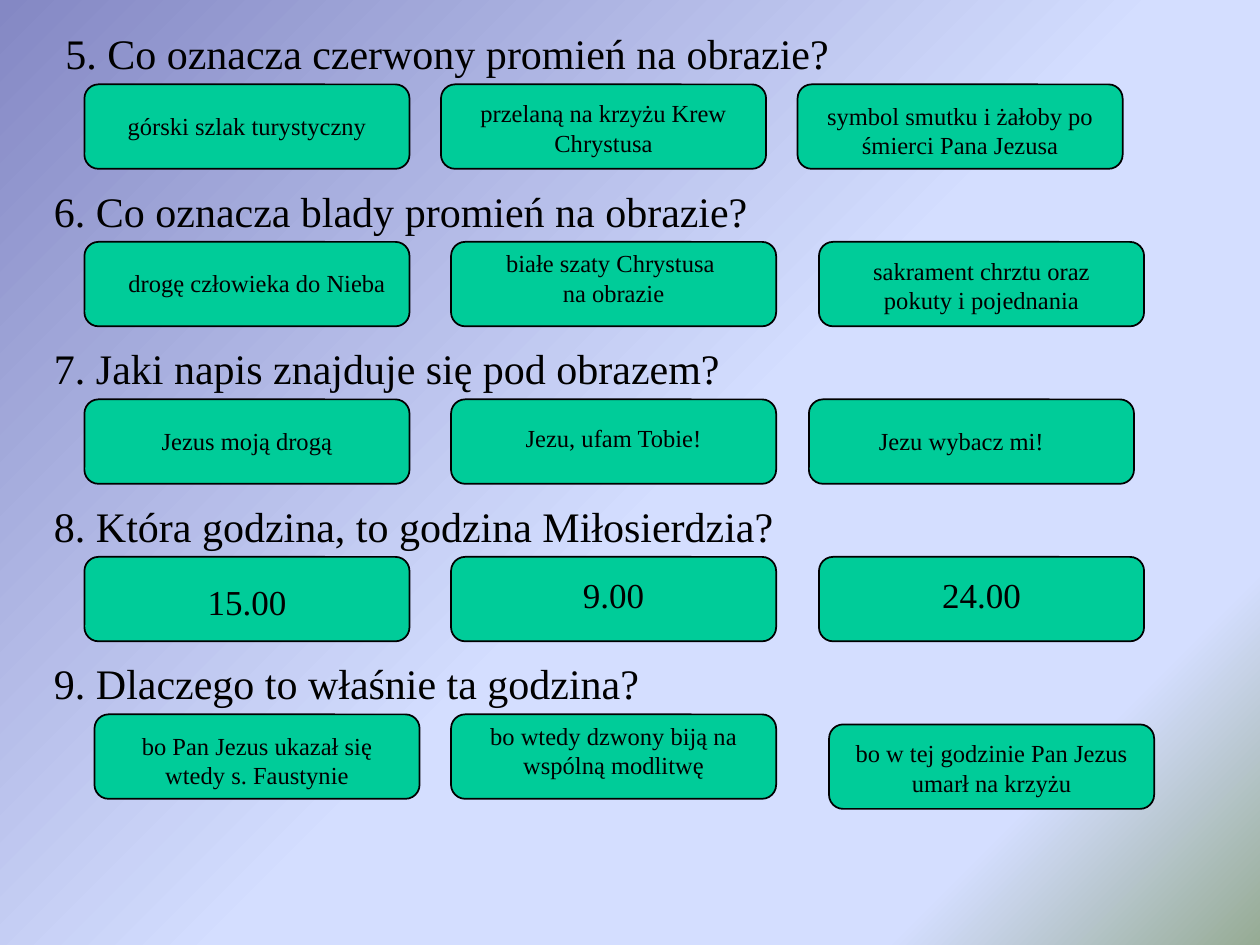
from dataclasses import dataclass

from lxml import etree
from pptx import Presentation
from pptx.dml.color import RGBColor
from pptx.enum import shapes, text
from pptx.oxml import ns
from pptx.util import Inches, Pt

FONT = "Times New Roman"
INK = "000000"
BOX_FILL = "00CC99"
BACKDROP = [(0, "8488C4"), (53, "D4DEFF"), (83, "D4DEFF"), (100, "96AB94")]

ROW_PITCH = 1.25
FIRST_QUESTION_TOP = 0.17
QUESTION_HEIGHT = 0.5
BOX_WIDTH, BOX_HEIGHT = 2.58, 0.67
LABEL_WIDTH = 2.42
INSET = 0.05


@dataclass
class Answer:
    wording: str
    left: float
    indent: float = 0.08   # label offset from the left of the box
    drop: float = 0        # label offset from the top of the box
    lead: float = 0        # extra inset above the first line
    lines: int = 1
    size: int = 14
    shift: float = 0       # box offset from its row


@dataclass
class Question:
    wording: str
    answers: list[Answer]
    left: float = 0.33


QUESTIONS = [
    Question("5. Co oznacza czerwony promień na obrazie?", [
        Answer("górski szlak turystyczny", 0.67, drop=0.16),
        Answer("przelaną na krzyżu Krew Chrystusa", 3.5, lead=0.06, lines=2),
        Answer("symbol smutku i żałoby po śmierci Pana Jezusa", 6.33, drop=0.08, lines=2),
    ], left=0.42),
    Question("6. Co oznacza blady promień na obrazie?", [
        Answer("drogę człowieka do Nieba", 0.67, indent=0.16, drop=0.16),
        Answer("białe szaty Chrystusa \nna obrazie", 3.58, lines=2),
        Answer("sakrament chrztu oraz pokuty i pojednania", 6.5, lead=0.06, lines=2),
    ]),
    Question("7. Jaki napis znajduje się pod obrazem?", [
        Answer("Jezus moją drogą", 0.67, drop=0.16),
        Answer("Jezu, ufam Tobie!", 3.58, drop=0.08, lead=0.06),
        Answer("Jezu wybacz mi!", 6.42, indent=0, drop=0.16),
    ]),
    Question("8. Która godzina, to godzina Miłosierdzia?", [
        Answer("15.00", 0.67, drop=0.08, lead=0.06, size=20),
        Answer("9.00", 3.58, drop=0.08, size=20),
        Answer("24.00", 6.5, drop=0.08, size=20),
    ]),
    Question("9. Dlaczego to właśnie ta godzina?", [
        Answer("bo Pan Jezus ukazał się wtedy s. Faustynie", 0.75, drop=0.08, lines=2),
        Answer("bo wtedy dzwony biją na wspólną modlitwę", 3.58, lines=2),
        Answer("bo w tej godzinie Pan Jezus umarł na krzyżu", 6.58, lead=0.06, lines=2,
               shift=0.08),
    ]),
]


def color(hex_code: str) -> RGBColor:
    return RGBColor.from_string(hex_code)


def paint_backdrop(slide) -> None:
    fill = slide.background.fill
    fill.gradient()
    fill.gradient_angle = 315
    stops = slide.background._cSld.find(".//" + ns.qn("a:gsLst"))
    for stop in list(stops):
        stops.remove(stop)
    for percent, hex_code in BACKDROP:
        stop = etree.SubElement(stops, ns.qn("a:gs"), pos=str(percent * 1000))
        etree.SubElement(stop, ns.qn("a:srgbClr"), val=hex_code)


def add_label(slide, wording: str, left: float, top: float, width: float, height: float,
              size: int, align: text.PP_ALIGN, lead: float = 0) -> None:
    label = slide.shapes.add_textbox(Inches(left), Inches(top), Inches(width), Inches(height))
    frame = label.text_frame
    frame.word_wrap = True
    frame.margin_top = Inches(INSET + lead)
    frame.margin_bottom = Inches(INSET)
    paragraph = frame.paragraphs[0]
    paragraph.alignment = align
    for index, line in enumerate(wording.split("\n")):
        if index:
            paragraph.add_line_break()
        run = paragraph.add_run()
        run.text = line
        run.font.name = FONT
        run.font.size = Pt(size)
        run.font.color.rgb = color(INK)


def add_answer(slide, answer: Answer, row_top: float) -> None:
    top = row_top + answer.shift
    box = slide.shapes.add_shape(
        shapes.MSO_SHAPE.ROUNDED_RECTANGLE,
        Inches(answer.left), Inches(top), Inches(BOX_WIDTH), Inches(BOX_HEIGHT))
    box.shadow.inherit = False
    box.fill.solid()
    box.fill.fore_color.rgb = color(BOX_FILL)
    box.line.color.rgb = color(INK)
    box.line.width = Pt(1)
    line_height = answer.size * 1.2 / 72
    height = 2 * INSET + answer.lead + answer.lines * line_height
    add_label(slide, answer.wording, answer.left + answer.indent, top + answer.drop,
              LABEL_WIDTH, height, answer.size, text.PP_ALIGN.CENTER, answer.lead)


def main() -> None:
    deck = Presentation()
    deck.slide_width, deck.slide_height = Inches(10), Inches(7.5)
    slide = deck.slides.add_slide(deck.slide_layouts[6])
    paint_backdrop(slide)
    for row, question in enumerate(QUESTIONS):
        top = FIRST_QUESTION_TOP + row * ROW_PITCH
        add_label(slide, question.wording, question.left, top, 7.58, QUESTION_HEIGHT,
                  24, text.PP_ALIGN.LEFT)
        for answer in question.answers:
            add_answer(slide, answer, top + QUESTION_HEIGHT)
    deck.save("out.pptx")


if __name__ == "__main__":
    main()
